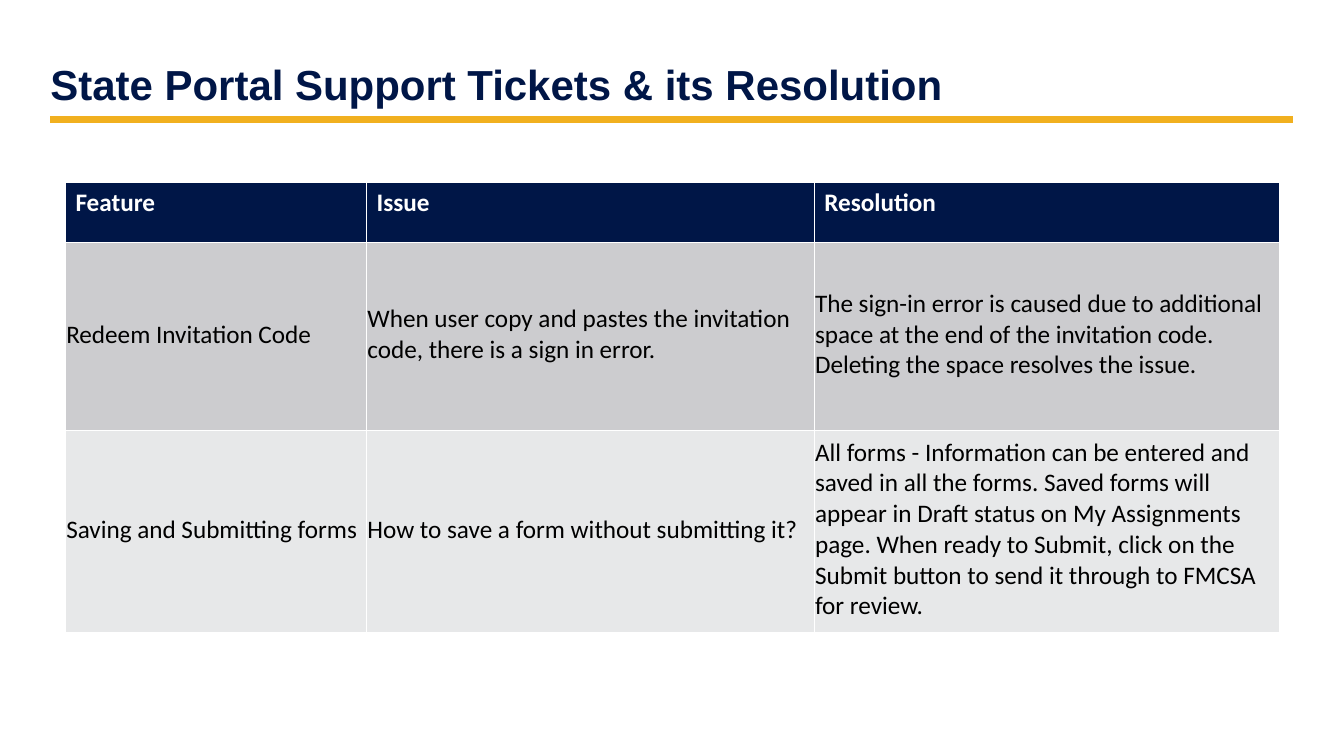
from pptx import Presentation
from pptx.dml.color import RGBColor
from pptx.enum import shapes, text
from pptx.oxml.ns import qn
from pptx.util import Cm, Pt
from lxml import etree

NAVY = RGBColor(0x00, 0x16, 0x47)
GOLD = RGBColor(0xF1, 0xB0, 0x1F)
WHITE = RGBColor(0xFF, 0xFF, 0xFF)
BLACK = RGBColor(0x00, 0x00, 0x00)
DARK_BAND = RGBColor(0xCC, 0xCC, 0xCF)
LIGHT_BAND = RGBColor(0xE7, 0xE8, 0xE9)


def write(frame, wording, font="Calibri", size=18, color=BLACK, bold=False, spacing=None):
    paragraph = frame.paragraphs[0]
    paragraph.alignment = text.PP_ALIGN.LEFT
    paragraph.line_spacing = spacing
    run = paragraph.add_run()
    run.text = wording
    run.font.name = font
    run.font.size = Pt(size)
    run.font.color.rgb = color
    run.font.bold = bold


deck = Presentation()
deck.slide_width, deck.slide_height = Cm(33.87), Cm(19.05)
slide = deck.slides.add_slide(deck.slide_layouts[5])

# Title and the rule under it
title = slide.shapes.title
title.left, title.top, title.width, title.height = Cm(1.27), Cm(0.36), Cm(31.32), Cm(2.54)
heading = title.text_frame
heading.auto_size = text.MSO_AUTO_SIZE.NONE
heading.vertical_anchor = text.MSO_ANCHOR.BOTTOM
heading.margin_left = 0
write(heading, "State Portal Support Tickets & its Resolution",
      font="Arial", size=30, color=NAVY, bold=True, spacing=0.9)

rule = slide.shapes.add_connector(shapes.MSO_CONNECTOR.STRAIGHT, Cm(1.27), Cm(3), Cm(32.59), Cm(3))
rule.line.color.rgb = GOLD
rule.line.width = Pt(5)
etree.SubElement(rule._element.spPr, qn("a:effectLst"))

# Tickets; the default table style draws the white borders
tickets = [
    ("Feature", "Issue", "Resolution"),
    ("Redeem Invitation Code",
     "When user copy and pastes the invitation code, there is a sign in error.",
     "The sign-in error is caused due to additional space at the end of the invitation code. "
     "Deleting the space resolves the issue."),
    ("Saving and Submitting forms",
     "How to save a form without submitting it?",
     "All forms - Information can be entered and saved in all the forms. Saved forms will "
     "appear in Draft status on My Assignments page. When ready to Submit, click on the "
     "Submit button to send it through to FMCSA for review."),
]
column_widths = [7.59, 11.28, 11.73]
row_heights = [1.52, 4.72, 5.11]
row_fills = [NAVY, DARK_BAND, LIGHT_BAND]

ticket_table = slide.shapes.add_table(
    len(tickets), len(column_widths), Cm(1.65), Cm(4.6),
    Cm(sum(column_widths)), Cm(sum(row_heights))).table
for column, width in zip(ticket_table.columns, column_widths):
    column.width = Cm(width)

for row, height, fill, ticket in zip(ticket_table.rows, row_heights, row_fills, tickets):
    row.height = Cm(height)
    is_header = ticket is tickets[0]
    for cell, wording in zip(row.cells, ticket):
        cell.fill.solid()
        cell.fill.fore_color.rgb = fill
        if not is_header:
            cell.vertical_anchor = text.MSO_ANCHOR.MIDDLE
            cell.margin_left = cell.margin_right = cell.margin_top = Cm(0.02)
        write(cell.text_frame, wording, color=WHITE if is_header else BLACK, bold=is_header)

deck.save("out.pptx")
